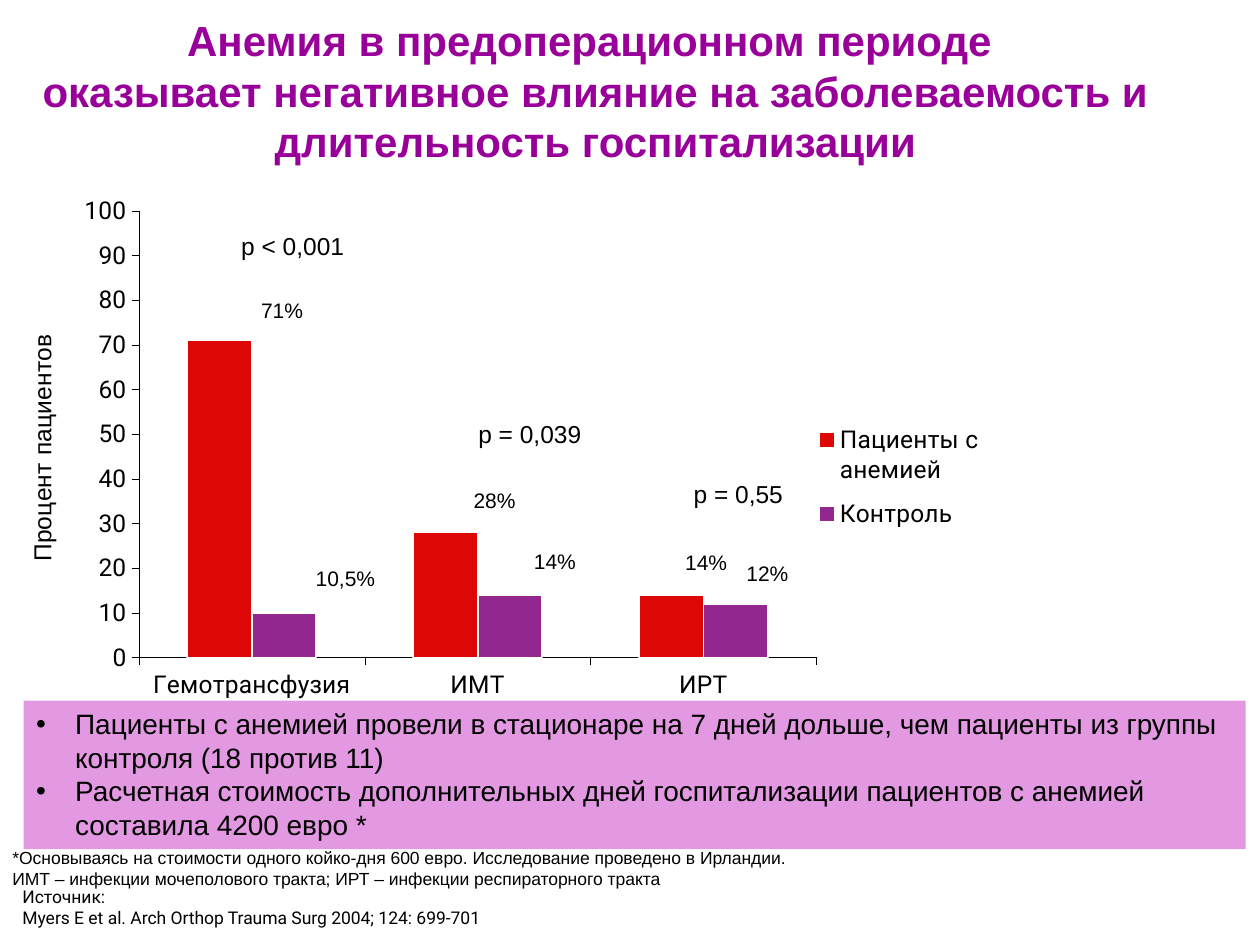
from lxml import etree
from pptx import Presentation
from pptx.chart.data import CategoryChartData
from pptx.dml.color import RGBColor
from pptx.enum.chart import XL_CHART_TYPE, XL_LEGEND_POSITION, XL_TICK_MARK
from pptx.enum.text import MSO_ANCHOR, MSO_AUTO_SIZE, PP_ALIGN
from pptx.oxml.ns import qn
from pptx.util import Inches, Pt

COLUMNS = XL_CHART_TYPE.COLUMN_CLUSTERED
RIGHT = XL_LEGEND_POSITION.RIGHT
OUTSIDE = XL_TICK_MARK.OUTSIDE
TOP, MIDDLE = MSO_ANCHOR.TOP, MSO_ANCHOR.MIDDLE
GROW, FIXED = MSO_AUTO_SIZE.SHAPE_TO_FIT_TEXT, MSO_AUTO_SIZE.NONE
LEFT, CENTER = PP_ALIGN.LEFT, PP_ALIGN.CENTER

BLACK, WHITE, PURPLE, PINK = "000000", "FFFFFF", "990099", "E398E2"
SERIES = [
    ("Пациенты с анемией", (71, 28, 14), "DD0806"),
    ("Контроль", (10, 14, 12), "91278F"),
]
P_VALUES = [
    ("p < 0,001", 20.9, 7.5),
    ("p = 0,039", 44.1, 43.4),
    ("p = 0,55", 64.5, 54.7),
]
PERCENTS = [
    ("71%", 23.7, 20.1, 7.8),
    ("10,5%", 29.4, 71.2, 8.8),
    ("28%", 44.5, 56.4, 7.8),
    ("14%", 50.4, 67.9, 7.8),
    ("14%", 65.2, 68.1, 7.8),
    ("12%", 71.2, 70.3, 7.8),
]


def rgb(value):
    return RGBColor.from_string(value)


def part(box, x, y, w, h):
    left, top, width, height = box
    return (int(left + width * x / 100), int(top + height * y / 100),
            int(width * w / 100), int(height * h / 100))


def place(sp, box):
    for name, value in zip(("left", "top", "width", "height"), box):
        setattr(sp, name, value)


def set_font(font, size, name="Arial", color=BLACK, bold=False):
    for key, value in {"size": Pt(size), "name": name, "bold": bold}.items():
        setattr(font, key, value)
    font.color.rgb = rgb(color)


def write(tf, lines, size, align=LEFT, anchor=TOP, fit=GROW, **style):
    for key, value in {"word_wrap": True, "vertical_anchor": anchor, "auto_size": fit}.items():
        setattr(tf, key, value)
    tf.text = "\n".join(lines)
    for p in tf.paragraphs:
        for key, value in {"alignment": align, "space_before": Pt(0)}.items():
            setattr(p, key, value)
        for r in p.runs:
            set_font(r.font, size, **style)


def add_text(s, box, lines, size, **style):
    write(s.shapes.add_textbox(*box).text_frame, lines, size, **style)


def add_title(s, box):
    sp = s.shapes.title
    place(sp, box)
    lines = ["Анемия в предоперационном периоде \v"
             "оказывает негативное влияние на заболеваемость и длительность госпитализации"]
    write(sp.text_frame, lines, 24, align=CENTER, anchor=MIDDLE, fit=FIXED,
          color=PURPLE, bold=True)


def set_layout(element, following, shares, inner=False):
    for old in element.findall(qn("c:layout")):
        element.remove(old)
    layout = etree.Element(qn("c:layout"))
    manual = etree.SubElement(layout, qn("c:manualLayout"))
    tags = [("layoutTarget", "inner")] if inner else []
    tags += [("xMode", "edge"), ("yMode", "edge")]
    tags += [(key, share / 100) for key, share in zip("xywh", shares)]
    for tag, value in tags:
        etree.SubElement(manual, qn("c:" + tag)).set("val", str(value))
    element.find(qn(following)).addprevious(layout)


def format_axis(axis):
    for key, value in {"has_major_gridlines": False, "major_tick_mark": OUTSIDE}.items():
        setattr(axis, key, value)
    set_font(axis.tick_labels.font, 14, "Roboto")
    axis.format.line.color.rgb = rgb(BLACK)
    axis.format.line.width = Pt(0.25)


def add_bars(s, box):
    data = CategoryChartData()
    data.categories = ["Гемотрансфузия", "ИМТ", "ИРТ"]
    for name, values, _ in SERIES:
        data.add_series(name, values)
    chart = s.shapes.add_chart(COLUMNS, *box, data).chart
    chart.has_title = False
    set_font(chart.font, 18, "Roboto")
    for axis in (chart.category_axis, chart.value_axis):
        format_axis(axis)
    axis = chart.value_axis
    for key, value in {"minimum_scale": 0, "maximum_scale": 100, "major_unit": 10}.items():
        setattr(axis, key, value)
    tf = axis.axis_title.text_frame
    tf.text = "Процент пациентов"
    set_font(tf.paragraphs[0].runs[0].font, 14)

    plot = chart.plots[0]
    for key, value in {"gap_width": 150, "overlap": 0, "vary_by_categories": False}.items():
        setattr(plot, key, value)
    for series, (_, _, color) in zip(plot.series, SERIES):
        series.format.fill.solid()
        series.format.fill.fore_color.rgb = rgb(color)
        series.format.line.color.rgb = rgb(WHITE)
        series.format.line.width = Pt(1)

    chart.has_legend = True
    legend = chart.legend
    for key, value in {"position": RIGHT, "include_in_layout": False}.items():
        setattr(legend, key, value)
    set_font(legend.font, 14, "Roboto")
    root = chart.element
    set_layout(root.find(".//" + qn("c:plotArea")), "c:barChart",
               (13.6, 4.9, 66.3, 85), inner=True)
    set_layout(root.find(".//" + qn("c:legend")), "c:overlay", (78, 43, 20, 25))

    for text, x, y in P_VALUES:
        add_text(s, part(box, x, y, 15.5, 8.2), [text], 14, align=CENTER)
    for text, x, y, w in PERCENTS:
        add_text(s, part(box, x, y, w, 7.2), [text], 12, align=CENTER)


def add_findings(s, box):
    sp = s.placeholders[1]
    place(sp, box)
    sp.fill.solid()
    sp.fill.fore_color.rgb = rgb(PINK)
    lines = ["Пациенты с анемией провели в стационаре на 7 дней дольше, "
             "чем пациенты из группы контроля (18 против 11)",
             "Расчетная стоимость дополнительных дней госпитализации "
             "пациентов с анемией составила 4200 евро *"]
    write(sp.text_frame, lines, 16, fit=FIXED)
    indent = Inches(0.31)
    for p in sp.text_frame.paragraphs:
        props = p._p.get_or_add_pPr()
        for key, value in {"marL": indent, "indent": -indent}.items():
            props.set(key, str(value))
        etree.SubElement(props, qn("a:buFont")).set("typeface", "Arial")
        etree.SubElement(props, qn("a:buChar")).set("char", "•")
    sp.element.getparent().append(sp.element)


def add_notes(s, notes_box, source_box):
    add_text(s, notes_box, [
        "*Основываясь на стоимости одного койко-дня 600 евро. Исследование проведено в Ирландии.",
        "ИМТ – инфекции мочеполового тракта; ИРТ – инфекции респираторного тракта"], 10)
    add_text(s, source_box, [
        "Источник:",
        "Myers E et al. Arch Orthop Trauma Surg 2004; 124: 699-701"], 10, name="Roboto")


def main():
    prs = Presentation()
    prs.slide_width, prs.slide_height = Inches(10), Inches(7.5)
    s = prs.slides.add_slide(prs.slide_layouts[1])
    page = (0, 0, prs.slide_width, prs.slide_height)
    add_title(s, part(page, 0, 1.7, 94.5, 15.73))
    add_bars(s, part(page, 0, 19.6, 81.1, 55.6))
    add_findings(s, part(page, 1.87, 74.13, 97, 15.73))
    add_notes(s, part(page, 0, 88.93, 89, 5.87), part(page, 0.8, 93.07, 50, 5.87))
    prs.save("out.pptx")


if __name__ == "__main__":
    main()
